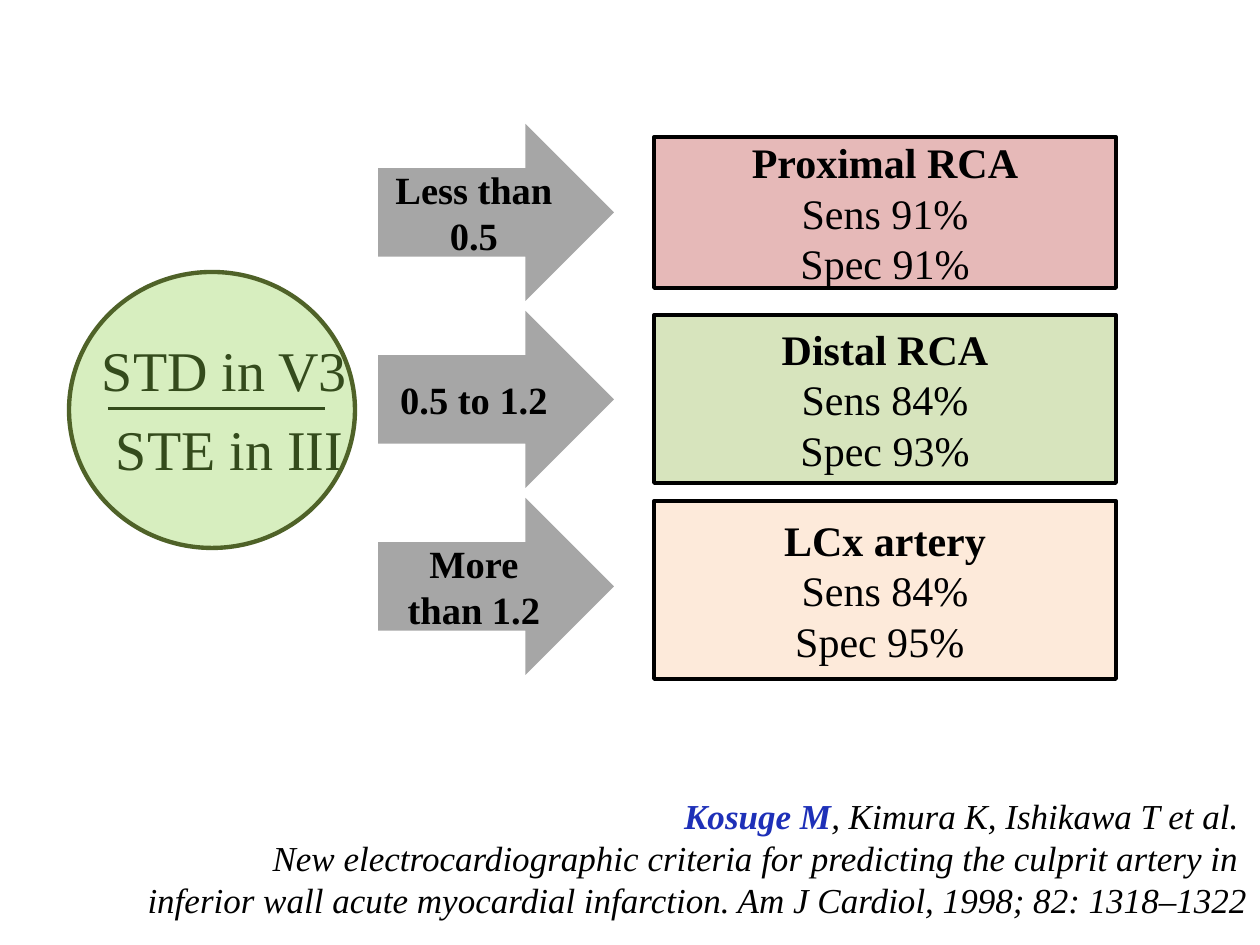
import pptx
import pptx.util
import pptx.dml.color
import pptx.enum.shapes
import pptx.enum.text
import pptx.oxml
import pptx.oxml.ns
from dataclasses import dataclass

SCALE = 914400 / 126
SHAPE = pptx.enum.shapes.MSO_SHAPE
ALIGN = pptx.enum.text.PP_ALIGN
ANCHOR = pptx.enum.text.MSO_ANCHOR


@dataclass(frozen=True)
class Theme:
    font: str = "Times New Roman"
    ink: str = "000000"
    author: str = "1E30B8"
    arrow: str = "A6A6A6"
    circle: str = "92D050"
    circle_line: str = "4F6228"
    ratio_size: int = 32
    result_size: int = 24
    arrow_size: int = 22
    citation_size: int = 20


THEME = Theme()

RATIO = [["STD in V3"], [" STE in III"]]
BRANCHES = [
    {"range": "Less than 0.5", "artery": "Proximal RCA", "sens": "Sens 91%",
     "spec": "Spec 91%", "fill": "E6B9B8", "top": 137, "height": 151},
    {"range": "0.5 to 1.2", "artery": "Distal RCA", "sens": "Sens 84%",
     "spec": "Spec 93%", "fill": "D7E4BD", "top": 315, "height": 168},
    {"range": "More than 1.2", "artery": "LCx artery", "sens": "Sens 84%",
     "spec": "Spec 95% ", "fill": "FDEADA", "top": 501, "height": 178},
]
CITATION = [
    [("Kosuge M", {"bold": True, "color": THEME.author}),
     ", Kimura K, Ishikawa T et al. "],
    ["New electrocardiographic criteria for predicting the culprit artery in "],
    ["inferior wall acute myocardial infarction. "
     "Am J Cardiol, 1998; 82: 1318–1322"],
]
ARROW_TOP, ARROW_PITCH = 124, 187


def px(value):
    return pptx.util.Emu(round(value * SCALE))


def rgb(color):
    return pptx.dml.color.RGBColor.from_string(color)


def write(box, paragraphs, size, align=ALIGN.LEFT, anchor=ANCHOR.TOP,
          bold=False, italic=False, color=THEME.ink, gap=0):
    frame = box.text_frame
    frame.word_wrap = True
    frame.vertical_anchor = anchor
    for index, spans in enumerate(paragraphs):
        para = frame.add_paragraph() if index else frame.paragraphs[0]
        para.alignment = align
        if index:
            para.space_before = pptx.util.Pt(gap)
        for item in spans:
            text, changes = item if isinstance(item, tuple) else (item, {})
            style = {"bold": bold, "italic": italic, "color": color, **changes}
            span = para.add_run()
            span.text = text
            span.font.name = THEME.font
            span.font.size = pptx.util.Pt(size)
            span.font.bold = style["bold"]
            span.font.italic = style["italic"]
            span.font.color.rgb = rgb(style["color"])


def add_shape(page, kind, bounds, fill, line=None, width=0):
    shape = page.shapes.add_shape(kind, *map(px, bounds))
    shape.shadow.inherit = False
    shape.fill.solid()
    shape.fill.fore_color.rgb = rgb(fill)
    if line:
        shape.line.color.rgb = rgb(line)
        shape.line.width = pptx.util.Pt(width)
    else:
        shape.line.fill.background()
    return shape


def add_text(page, bounds, paragraphs, size, **style):
    box = page.shapes.add_textbox(*map(px, bounds))
    write(box, paragraphs, size, **style)
    return box


def add_ratio(page):
    box = add_text(page, (102, 336, 260, 150), RATIO, THEME.ratio_size, gap=6.4)
    frame = box.text_frame
    frame.margin_left = frame.margin_right = frame.margin_top = 0
    bar = page.shapes.add_connector(
        pptx.enum.shapes.MSO_CONNECTOR.STRAIGHT, *map(px, (108, 409, 325, 409)))
    bar.line.color.rgb = rgb(THEME.ink)
    bar.line.width = pptx.util.Pt(1.75)
    pptx.oxml.ns.qn("a:effectLst")
    properties = bar.element.spPr
    properties.append(properties.makeelement(pptx.oxml.ns.qn("a:effectLst"), {}))
    circle = add_shape(page, SHAPE.OVAL, (69, 272, 286, 276), THEME.circle,
                       THEME.circle_line, 2.5)
    tint = circle.element.spPr.find(".//" + pptx.oxml.ns.qn("a:srgbClr"))
    alpha = tint.makeelement(pptx.oxml.ns.qn("a:alpha"), {"val": "36000"})
    tint.append(alpha)


def add_branch(page, index, branch):
    arrow = add_shape(page, SHAPE.RIGHT_ARROW,
                      (378, ARROW_TOP + index * ARROW_PITCH, 236, 177), THEME.arrow)
    write(arrow, [[branch["range"]]], THEME.arrow_size, align=ALIGN.CENTER,
          anchor=ANCHOR.MIDDLE, bold=True)
    result = add_shape(page, SHAPE.RECTANGLE,
                       (654, branch["top"], 462, branch["height"]),
                       branch["fill"], THEME.ink, 2.25)
    lines = [[(branch["artery"], {"bold": True})], [branch["sens"]], [branch["spec"]]]
    write(result, lines, THEME.result_size, align=ALIGN.CENTER, anchor=ANCHOR.MIDDLE)


def main():
    deck = pptx.Presentation()
    deck.slide_width, deck.slide_height = px(1260), px(945)
    page = deck.slides.add_slide(deck.slide_layouts[6])
    add_ratio(page)
    for index, branch in enumerate(BRANCHES):
        add_branch(page, index, branch)
    add_text(page, (0, 788, 1260, 140), CITATION, THEME.citation_size,
             align=ALIGN.RIGHT, italic=True)
    deck.save("out.pptx")


if __name__ == "__main__":
    main()
